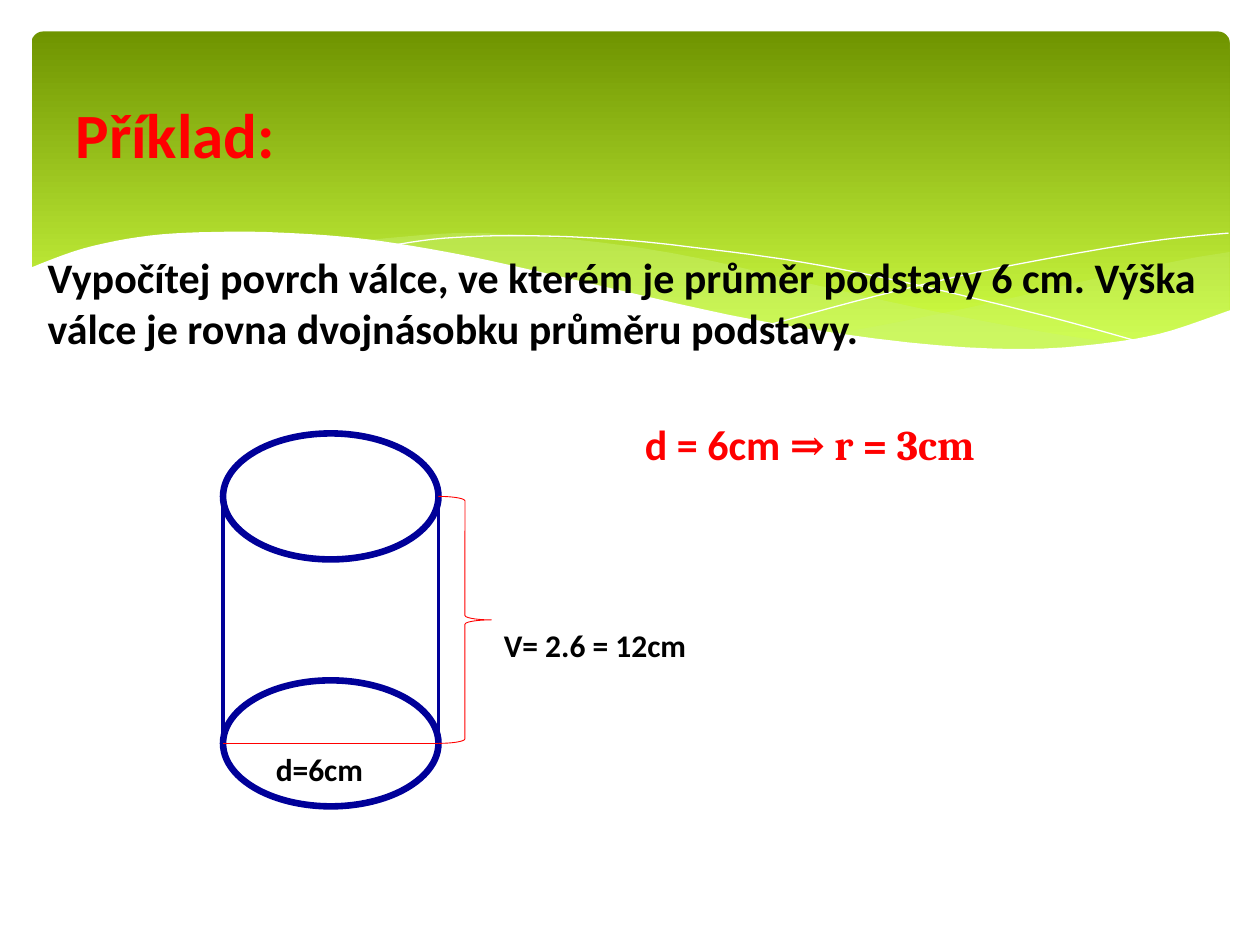
from lxml.etree import SubElement
from pptx import Presentation
from pptx.dml.color import RGBColor
from pptx.enum.shapes import MSO_CONNECTOR as Conn, MSO_SHAPE as Kind
from pptx.enum.text import MSO_ANCHOR as Anchor, PP_ALIGN as Align
from pptx.oxml.ns import qn
from pptx.util import Inches, Pt

HUES = {"dark": "6F9400", "lime": "D0FF44", "pale": "CAF278", "white": "FFFFFF",
        "red": "FF0000", "black": "000000", "navy": "000099"}

# Waves: (edges, fill, opacity in percent); each edge is a smooth curve
WAVES = [
    ([[(9.76, 2), (9.35, 2.07), (8.61, 2.23), (7.79, 2.42), (7.06, 2.57), (6.61, 2.65)],
      [(6.61, 2.65), (7.19, 2.72), (7.69, 2.77), (8.14, 2.78), (8.63, 2.75),
       (9.05, 2.69), (9.42, 2.59), (9.76, 2.47)]], "pale", 29),
    ([[(8.93, 2.73), (8.37, 2.65), (7.41, 2.47), (6.29, 2.22), (5.55, 2.05),
       (4.89, 1.94), (4.2, 1.87), (3.61, 1.85), (2.86, 1.91)],
      [(2.86, 1.91), (3.62, 2.03), (4.49, 2.22), (5.3, 2.4), (6.18, 2.58),
       (6.95, 2.7), (7.61, 2.77), (8.18, 2.78), (8.93, 2.73)]], "pale", 40),
    ([[(3.09, 1.95), (3.53, 1.89), (4.16, 1.87), (4.89, 1.9), (5.56, 1.97),
       (6.36, 2.08), (7.27, 2.26), (8.31, 2.51), (9.07, 2.72)]], None, 100),
    ([[(6.13, 2.57), (6.95, 2.35), (7.76, 2.16), (8.66, 1.99), (9.24, 1.9),
       (9.75, 1.85)]], None, 100),
    ([[(9.77, 2.46), (9.2, 2.65), (8.63, 2.74), (8.09, 2.77), (7.44, 2.74),
       (6.68, 2.65), (5.79, 2.5), (4.47, 2.2), (3.65, 2.02), (2.92, 1.9),
       (2.3, 1.85), (1.77, 1.84), (1.19, 1.87), (0.67, 1.97), (0.23, 2.13)],
      [(0.23, 3.29), (9.77, 3.29)]], "white", 100),
]

# Texts: (left, top, width, height, size, [(words, colour, font)])
TEXTS = [
    (0.28, 1.95, 9.45, 0.9, 24,
     [("Vypočítej povrch válce, ve kterém je průměr podstavy 6 cm. "
       "Výška válce je rovna dvojnásobku průměru podstavy.", "black", "Calibri")]),
    (5.02, 3.27, 4.5, 0.5, 24,
     [("d = 6cm ", "red", "Calibri"), ("⇒ r = 3cm", "red", "Cambria")]),
    (2.09, 5.9, 1.18, 0.4, 18, [("d=6cm", "black", "Calibri")]),
    (3.9, 4.92, 1.81, 0.4, 18, [("V= 2.6 = 12cm", "black", "Calibri")]),
]

# Cylinder: left and right side, centres of top and base, ellipse height
LEFT, RIGHT, TOP, BASE, OVAL = 1.77, 3.48, 3.94, 5.9, 1
BRACE = 0.42

prs = Presentation()
prs.slide_width, prs.slide_height = Inches(10), Inches(7.5)
slide = prs.slides.add_slide(prs.slide_layouts[5])
shapes = slide.shapes


def rgb(name):
    return RGBColor.from_string(HUES[name])


def stroke(item, hue, width):
    item.line.color.rgb = rgb(hue)
    item.line.width = Pt(width)


def add_kind(kind, *box):
    item = shapes.add_shape(kind, *map(Inches, box))
    item.shadow.inherit = False
    item.fill.background()
    return item


def add_line(x1, y1, x2, y2, hue, width):
    item = shapes.add_connector(Conn.STRAIGHT, *map(Inches, (x1, y1, x2, y2)))
    SubElement(item._element.spPr, qn("a:effectLst"))
    stroke(item, hue, width)


def smooth(pts, steps=6):
    """Catmull-Rom curve through the points, in thousandths of an inch."""
    ends = [pts[0], *pts, pts[-1]]
    out = [pts[0]]
    for a, b, c, d in zip(ends, ends[1:], ends[2:], ends[3:]):
        for t in (n / steps for n in range(1, steps + 1)):
            out.append([(2 * q + (r - p) * t + (2 * p - 5 * q + 4 * r - s) * t ** 2
                         + (3 * q - p - 3 * r + s) * t ** 3) / 2
                        for p, q, r, s in zip(a, b, c, d)])
    return [(x * 1000, y * 1000) for x, y in out]


def add_wave(edges, hue, alpha):
    pts = [pt for edge in edges for pt in smooth(edge)]
    pen = shapes.build_freeform(*pts[0], scale=Inches(1) / 1000)
    pen.add_line_segments(pts[1:], close=hue is not None)
    item = pen.convert_to_shape()
    item.shadow.inherit = False
    if hue is None:
        item.fill.background()
        stroke(item, "white", 0)
        return
    item.line.fill.background()
    item.fill.solid()
    item.fill.fore_color.rgb = rgb(hue)
    if alpha < 100:
        tint = item._element.spPr.find(".//" + qn("a:srgbClr"))
        SubElement(tint, qn("a:alpha"), val=str(alpha * 1000))


# Green band with waves
band = add_kind(Kind.ROUNDED_RECTANGLE, 0.25, 0.25, 9.51, 2.7)
band.adjustments[0] = 0.034
band.line.fill.background()
band.fill.gradient()
band.fill.gradient_angle = 270
for stop, hue, place in zip(band.fill.gradient_stops, ("dark", "lime"), (0, 0.9)):
    stop.color.rgb = rgb(hue)
    stop.position = place
for wave in WAVES:
    add_wave(*wave)

# Title, raised above the band
title = shapes.title
title.left, title.top, title.width, title.height = map(Inches, (0.5, 0.37, 9, 1.37))
title.text_frame.text = "Příklad:"
title.text_frame.vertical_anchor = Anchor.MIDDLE
head = title.text_frame.paragraphs[0]
head.alignment = Align.LEFT
head.font.name, head.font.size, head.font.bold = "Calibri", Pt(36), True
head.font.color.rgb = rgb("red")
shapes._spTree.append(title._element)

# Cylinder with diameter and height
for mid in (TOP, BASE):
    stroke(add_kind(Kind.OVAL, LEFT, mid - OVAL / 2, RIGHT - LEFT, OVAL), "navy", 3.78)
for side in (LEFT, RIGHT):
    add_line(side, TOP, side, BASE, "navy", 2.25)
add_line(LEFT, BASE, RIGHT, BASE, "red", 0.5)
stroke(add_kind(Kind.RIGHT_BRACE, RIGHT, TOP, BRACE, BASE - TOP), "red", 0.5)

# Task, formula and labels
for *box, size, runs in TEXTS:
    frame = shapes.add_textbox(*map(Inches, box)).text_frame
    frame.word_wrap = True
    para = frame.paragraphs[0]
    para.font.size, para.font.bold = Pt(size), True
    for words, hue, face in runs:
        run = para.add_run()
        run.text = words
        run.font.name = face
        run.font.color.rgb = rgb(hue)

prs.save("out.pptx")
